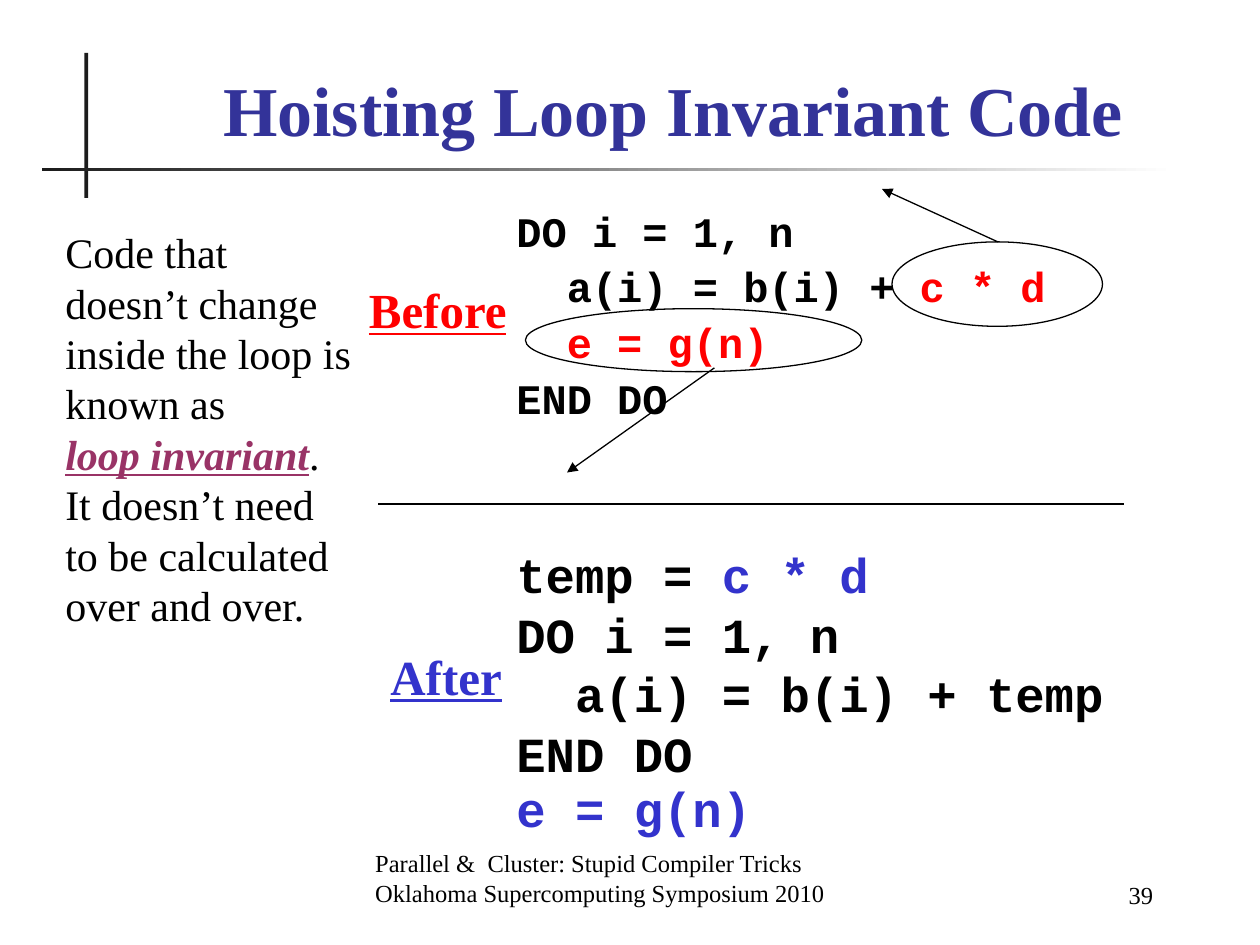
from lxml import etree
from pptx import Presentation
from pptx.dml.color import RGBColor
from pptx.enum.shapes import MSO_CONNECTOR, MSO_SHAPE
from pptx.enum.text import MSO_ANCHOR, PP_ALIGN
from pptx.oxml.ns import qn
from pptx.util import Inches, Pt

BLACK = RGBColor(0x00, 0x00, 0x00)
WHITE = RGBColor(0xFF, 0xFF, 0xFF)
CHARCOAL = RGBColor(0x1C, 0x1C, 0x1C)
NAVY = RGBColor(0x33, 0x33, 0x99)
RED = RGBColor(0xFF, 0x00, 0x00)
BLUE = RGBColor(0x33, 0x33, 0xCC)
PLUM = RGBColor(0x99, 0x33, 0x66)

SERIF = "Times New Roman"
MONO = "Courier New"

presentation = Presentation()
presentation.slide_width = Inches(10)
presentation.slide_height = Inches(7.5)
slide = presentation.slides.add_slide(presentation.slide_layouts[6])


def add_text(box, paragraphs, size, font=SERIF, color=BLACK, bold=False,
             underline=False, align=PP_ALIGN.LEFT, anchor=MSO_ANCHOR.TOP,
             wrap=True, space_before=0, line_spacings=None):
    """Each paragraph is a list of (text, color) runs; a color of None means the default."""
    shape = slide.shapes.add_textbox(*map(Inches, box))
    frame = shape.text_frame
    frame.word_wrap = wrap
    frame.vertical_anchor = anchor
    for index, runs in enumerate(paragraphs):
        paragraph = frame.paragraphs[0] if index == 0 else frame.add_paragraph()
        paragraph.alignment = align
        if index and space_before:
            paragraph.space_before = Pt(space_before)
        if line_spacings:
            paragraph.line_spacing = line_spacings[index]
        for text, run_color in runs:
            run = paragraph.add_run()
            run.text = text
            run.font.name = font
            run.font.size = Pt(size)
            run.font.bold = bold
            run.font.underline = underline
            run.font.color.rgb = run_color or color
    return frame


def add_line(start, end, arrow=False):
    line = slide.shapes.add_connector(
        MSO_CONNECTOR.STRAIGHT, *map(Inches, start + end))
    line.line.color.rgb = BLACK
    line.line.width = Pt(0.75)
    if arrow:
        outline = line.line._get_or_add_ln()
        etree.SubElement(outline, qn("a:tailEnd"), type="triangle")
    etree.SubElement(line._element.spPr, qn("a:effectLst"))


# Crossed bars beside and below the title
for box in [(0.67, 0.42, 0.03, 1.15), (0.33, 1.33, 9, 0.03)]:
    bar = slide.shapes.add_shape(MSO_SHAPE.RECTANGLE, *map(Inches, box))
    bar.shadow.inherit = False
    bar.line.fill.background()
    if box[2] > box[3]:
        bar.fill.gradient()
        bar.fill.gradient_angle = 0
        for stop, color in zip(bar.fill.gradient_stops, (CHARCOAL, WHITE)):
            stop.color.rgb = color
    else:
        bar.fill.solid()
        bar.fill.fore_color.rgb = CHARCOAL

# Footer and title
add_text((2.88, 6.75, 4.37, 0.5),
         [[("Parallel &  Cluster: Stupid Compiler Tricks", None)],
          [("Oklahoma Supercomputing Symposium 2010", None)]],
         size=14, anchor=MSO_ANCHOR.BOTTOM)
add_text((7.83, 6.77, 1.42, 0.5), [[("39", None)]],
         size=14, align=PP_ALIGN.RIGHT, anchor=MSO_ANCHOR.BOTTOM)
add_text((1.08, 0.5, 8.52, 0.74), [[("Hoisting Loop Invariant Code", None)]],
         size=40, color=NAVY, bold=True, align=PP_ALIGN.CENTER,
         anchor=MSO_ANCHOR.BOTTOM)

# Code before and after hoisting
add_text((4, 1.58, 5.42, 2.59),
         [[("DO i = 1, n", None)],
          [("  a(i) = b(i) + ", None), ("c * d", RED)],
          [("  e = g(n)", RED)],
          [("END DO", None)]],
         size=24, font=MONO, bold=True, space_before=6,
         line_spacings=[1.0, 0.9, 0.9, 0.9])
add_text((4, 4.27, 5.08, 2.48),
         [[("temp = ", None), ("c * d", BLUE)],
          [("DO i = 1, n", None)],
          [("  a(i) = b(i) + temp", None)],
          [("END DO", None)],
          [("e = g(n)", BLUE)]],
         size=28, font=MONO, bold=True, space_before=7.2,
         line_spacings=[1.0, 0.8, 0.8, 0.8, 0.7])

for label, box, color in [("Before", (2.83, 2.17, 1.3, 0.57), RED),
                          ("After", (3, 5.08, 1.09, 0.57), BLUE)]:
    add_text(box, [[(label, None)]], size=28, color=color, bold=True,
             underline=True, wrap=False)

# Circles around the invariant expressions, with arrows out of the loop
for box in [(7.08, 1.92, 1.67, 0.67), (4.17, 2.45, 2.67, 0.5)]:
    ellipse = slide.shapes.add_shape(MSO_SHAPE.OVAL, *map(Inches, box))
    ellipse.shadow.inherit = False
    ellipse.fill.background()
    ellipse.line.color.rgb = BLACK
    ellipse.line.width = Pt(0.75)
add_line((7.92, 1.92), (7, 1.5), arrow=True)
add_line((5.67, 2.92), (4.5, 3.75), arrow=True)

# Explanation, with the defined term starting a new line
explanation = add_text(
    (0.42, 1.75, 2.5, 3.3),
    [[("Code that doesn’t change inside the loop is known as\v", None),
      ("loop invariant", PLUM),
      (". It doesn’t need to be calculated over and over.", None)]],
    size=24).paragraphs[0]
lead, term, rest = explanation.runs
lead.text = lead.text.replace("\v", "").replace("_x000B_", "")
explanation.add_line_break()
line_break = explanation._p[-1]
lead._r.addnext(line_break)
term.font.bold = term.font.italic = term.font.underline = True

# Divider between the two versions
add_line((3, 4), (8.92, 4))

presentation.save("out.pptx")
